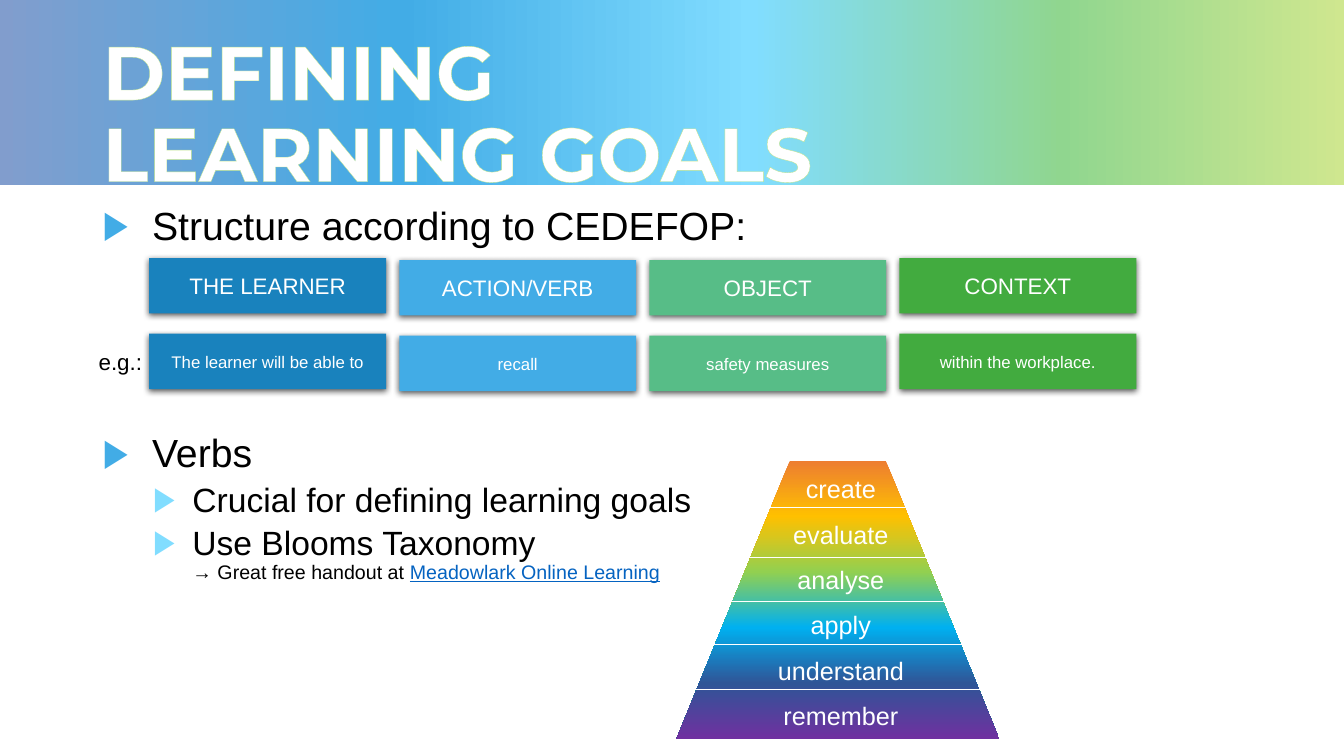
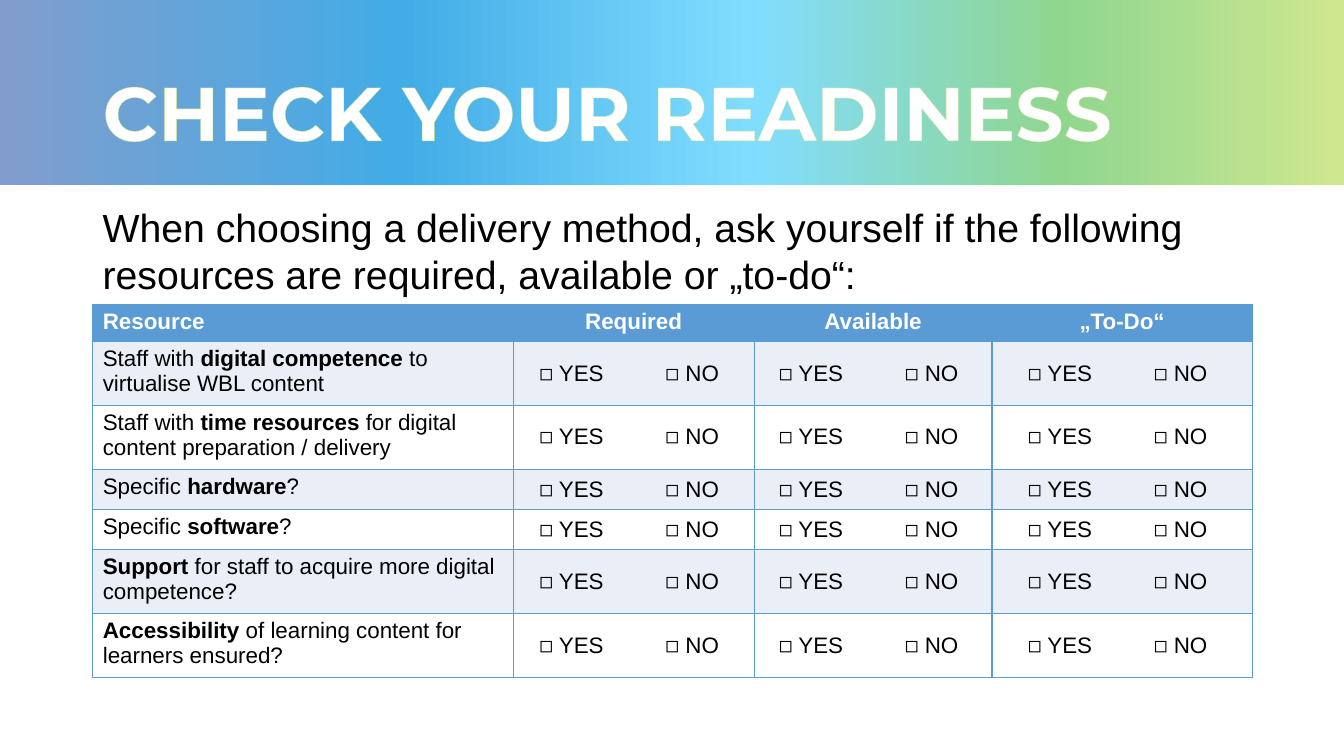
import pptx
import pptx.util
from lxml import etree
from pptx.dml.color import RGBColor
from pptx.enum.shapes import MSO_CONNECTOR, MSO_SHAPE
from pptx.enum.text import MSO_ANCHOR, PP_ALIGN
from pptx.oxml.ns import qn
from pptx.util import Inches, Pt

WHITE = RGBColor(0xFF, 0xFF, 0xFF)
BLACK = RGBColor(0, 0, 0)
DARK_BLUE = RGBColor(0x19, 0x82, 0xBD)
BLUE = RGBColor(0x42, 0xAC, 0xE6)
LIGHT_BLUE = RGBColor(0x81, 0xDD, 0xFF)
TEAL = RGBColor(0x57, 0xBD, 0x87)
GREEN = RGBColor(0x42, 0xAB, 0x3F)
LINK_BLUE = RGBColor(0x05, 0x63, 0xC1)
TITLE_EDGE = RGBColor(0xBF, 0xE3, 0x8F)
TABLE_BLUE = RGBColor(0x5B, 0x9B, 0xD5)
TABLE_TINT = RGBColor(0xEA, 0xEF, 0xF7)
BAND_STOPS = [(0, "819DCD"), (30, "42ACE6"), (56, "81DDFF"), (79, "90D68F"), (100, "CFE78F")]
PYRAMID_STOPS = [(0, "ED7D31"), (20, "FFC000"), (40, "92D050"),
                 (60, "00B0F0"), (80, "2F5597"), (100, "7030A0")]


def add_run(p, text, size, color=BLACK, bold=False, font="Arial"):
    r = p.add_run()
    r.text = text
    r.font.name = font
    r.font.size = Pt(size)
    r.font.bold = bold
    r.font.color.rgb = color
    return r


def fill_gradient(shape, stops, angle):
    """Fill with (percent, hex) stops; the angle runs counter-clockwise."""
    shape.shadow.inherit = False
    shape.line.fill.background()
    shape.fill.gradient()
    shape.fill.gradient_angle = angle
    stop_list = shape.element.spPr.find(".//" + qn("a:gsLst"))
    for old in list(stop_list):
        stop_list.remove(old)
    for percent, color in stops:
        stop = etree.SubElement(stop_list, qn("a:gs"), pos=str(percent * 1000))
        etree.SubElement(stop, qn("a:srgbClr"), val=color)


prs = pptx.Presentation()
prs.slide_width = Inches(13.33)
prs.slide_height = Inches(7.5)

# Shared band and title
for title_lines in (["DEFINING", "LEARNING GOALS"], ["CHECK YOUR READINESS"]):
    s = prs.slides.add_slide(prs.slide_layouts[6])
    band = s.shapes.add_shape(MSO_SHAPE.RECTANGLE, 0, Inches(-0.08), Inches(13.33), Inches(1.92))
    fill_gradient(band, BAND_STOPS, 0)
    tf = s.shapes.add_textbox(Inches(0.92), Inches(0.32), Inches(11.5), Inches(1.67)).text_frame
    tf.word_wrap = True
    tf.vertical_anchor = MSO_ANCHOR.MIDDLE
    p = tf.paragraphs[0]
    p.line_spacing = 0.9
    for i, line in enumerate(title_lines):
        if i:
            p.add_line_break()
        r = add_run(p, line, 54, WHITE, True, "Montserrat")
        edge = etree.Element(qn("a:ln"), w=str(Pt(0.75)))
        edge_fill = etree.SubElement(edge, qn("a:solidFill"))
        etree.SubElement(edge_fill, qn("a:srgbClr"), val=str(TITLE_EDGE))
        r.font.fill  # the outline goes ahead of the fill
        p.runs[-1].font.fill.solid()
        p.runs[-1].font.color.rgb = WHITE
        r._r.get_or_add_rPr().insert(0, edge)

goals_slide, readiness_slide = prs.slides

# Learning goals: bulleted text
s = goals_slide
tf = s.shapes.add_textbox(Inches(0.92), Inches(2), Inches(11.5), Inches(4.76)).text_frame
tf.word_wrap = True
bullets = [  # text, size, bullet colour, left indent, space before
    ("Structure according to CEDEFOP:", 28, BLUE, 0.49, 0),
    ("Verbs", 28, BLUE, 0.49, 132),
    ("Crucial for defining learning goals", 24, LIGHT_BLUE, 0.89, 5),
    ("Use Blooms Taxonomy", 24, LIGHT_BLUE, 0.89, 5),
]
for i, (text, size, color, indent, before) in enumerate(bullets):
    p = tf.add_paragraph() if i else tf.paragraphs[0]
    p.line_spacing = 0.9
    p.space_before = Pt(before)
    pPr = p._p.get_or_add_pPr()
    hanging = 0.49 if indent == 0.49 else 0.39
    pPr.set("marL", str(Inches(indent)))
    pPr.set("indent", str(-Inches(hanging)))
    bullet_color = etree.SubElement(pPr, qn("a:buClr"))
    etree.SubElement(bullet_color, qn("a:srgbClr"), val=str(color))
    etree.SubElement(pPr, qn("a:buFont"), typeface="Arial")
    etree.SubElement(pPr, qn("a:buChar"), char="▶")
    add_run(p, text, size)
p.add_line_break()
add_run(p, "→ Great free handout at ", 14)
add_run(p, "Meadowlark Online Learning", 14, LINK_BLUE).font.underline = True

# Learning goals: sentence parts with an example below each
columns = [  # heading, example, fill, top
    ("THE LEARNER", "The learner will be able to", DARK_BLUE, 2.56),
    ("ACTION/VERB", "recall", BLUE, 2.58),
    ("OBJECT", "safety measures", TEAL, 2.58),
    ("CONTEXT", "within the workplace.", GREEN, 2.56),
]
for i, (heading, example, color, top) in enumerate(columns):
    for text, size, y in ((heading, 16, top), (example, 12, top + 0.75)):
        box = s.shapes.add_shape(MSO_SHAPE.RECTANGLE, Inches(1.48 + 2.48 * i), Inches(y),
                                 Inches(2.35), Inches(0.55))
        box.fill.solid()
        box.fill.fore_color.rgb = color
        box.line.fill.background()
        box.shadow.inherit = False
        shadow = etree.SubElement(box.element.spPr.find(qn("a:effectLst")), qn("a:outerShdw"),
                                  blurRad=str(Pt(4.5)), dist=str(Pt(1.5)), dir="5400000")
        shadow_color = etree.SubElement(shadow, qn("a:srgbClr"), val=str(BLACK))
        etree.SubElement(shadow_color, qn("a:alpha"), val="63000")
        tf = box.text_frame
        tf.vertical_anchor = MSO_ANCHOR.MIDDLE
        tf.paragraphs[0].alignment = PP_ALIGN.CENTER
        add_run(tf.paragraphs[0], text, size, WHITE)

tf = s.shapes.add_textbox(Inches(0.88), Inches(3.4), Inches(0.95), Inches(0.37)).text_frame
tf.word_wrap = True
add_run(tf.paragraphs[0], "e.g.:", 16)

# Learning goals: taxonomy pyramid
pyramid = s.shapes.add_group_shape().shapes
trapezoid = pyramid.add_shape(MSO_SHAPE.TRAPEZOID, Inches(6.71), Inches(4.57),
                              Inches(3.2), Inches(2.76))
trapezoid.adjustments[0] = 0.408
fill_gradient(trapezoid, PYRAMID_STOPS, 270)
tf = pyramid.add_textbox(Inches(7.06), Inches(4.5), Inches(2.56), Inches(2.78)).text_frame
tf.word_wrap = True
for i, level in enumerate(["create", "evaluate", "analyse", "apply", "understand", "remember"]):
    p = tf.add_paragraph() if i else tf.paragraphs[0]
    p.alignment = PP_ALIGN.CENTER
    p.line_spacing = 1.5
    add_run(p, level, 18, WHITE)
for y in (5.03, 5.53, 5.97, 6.39, 6.84):
    divider = pyramid.add_connector(MSO_CONNECTOR.STRAIGHT, Inches(6.9), Inches(y),
                                    Inches(9.75), Inches(y))
    divider.line.color.rgb = WHITE
    divider.line.width = Pt(0.5)
    etree.SubElement(divider.element.spPr, qn("a:effectLst"))

# Readiness: checklist table
s = readiness_slide
headings = ["Resource", "Required", "Available", "„To-Do“"]
resources = [  # text before, bold text, text after
    ("Staff with ", "digital competence", " to virtualise WBL content"),
    ("Staff with ", "time resources", " for digital content preparation / delivery"),
    ("Specific ", "hardware", "?"),
    ("Specific ", "software", "?"),
    ("", "Support", " for staff to acquire more digital competence?"),
    ("", "Accessibility", " of learning content for learners ensured?"),
]
col_widths = [4.17, 2.39, 2.36, 2.58]
row_heights = [0.35, 0.6, 0.6, 0.4, 0.4, 0.6, 0.6]
table = s.shapes.add_table(len(row_heights), len(col_widths), Inches(0.92), Inches(3.02),
                           Inches(sum(col_widths)), Inches(sum(row_heights))).table
for column, width in zip(table.columns, col_widths):
    column.width = Inches(width)
for i, height in enumerate(row_heights):
    table.rows[i].height = Inches(height)
    for j, width in enumerate(col_widths):
        cell = table.cell(i, j)
        p = cell.text_frame.paragraphs[0]
        cell.fill.solid()
        if i == 0:
            cell.fill.fore_color.rgb = TABLE_BLUE
            p.alignment = PP_ALIGN.CENTER if j else PP_ALIGN.LEFT
            add_run(p, headings[j], 16, WHITE, True)
        else:
            cell.fill.fore_color.rgb = TABLE_TINT if i % 2 else WHITE
            if j == 0:
                before, strong, after = resources[i - 1]
                for text, bold in ((before, False), (strong, True), (after, False)):
                    if text:
                        add_run(p, text, 16, bold=bold)
            else:
                cell.vertical_anchor = MSO_ANCHOR.MIDDLE
                cell.margin_left = Inches((width - 1.87) / 2)
                cell.margin_right = 0
                tabs = etree.SubElement(p._p.get_or_add_pPr(), qn("a:tabLst"))
                etree.SubElement(tabs, qn("a:tab"), pos=str(Inches(1.25)), algn="l")
                add_run(p, "◻ YES\t◻ NO", 16)
        tcPr = cell._tc.get_or_add_tcPr()
        for k, side in enumerate(("a:lnL", "a:lnR", "a:lnT", "a:lnB")):
            border = etree.Element(qn(side), w=str(Pt(1)))
            border_fill = etree.SubElement(border, qn("a:solidFill"))
            etree.SubElement(border_fill, qn("a:srgbClr"), val=str(TABLE_BLUE))
            tcPr.insert(k, border)

tf = s.shapes.add_textbox(Inches(0.92), Inches(1.97), Inches(11.67), Inches(1.05)).text_frame
tf.word_wrap = True
add_run(tf.paragraphs[0], "When choosing a delivery method, ask yourself if the following "
        "resources are required, available or „to-do“:", 28)

prs.save("out.pptx")
